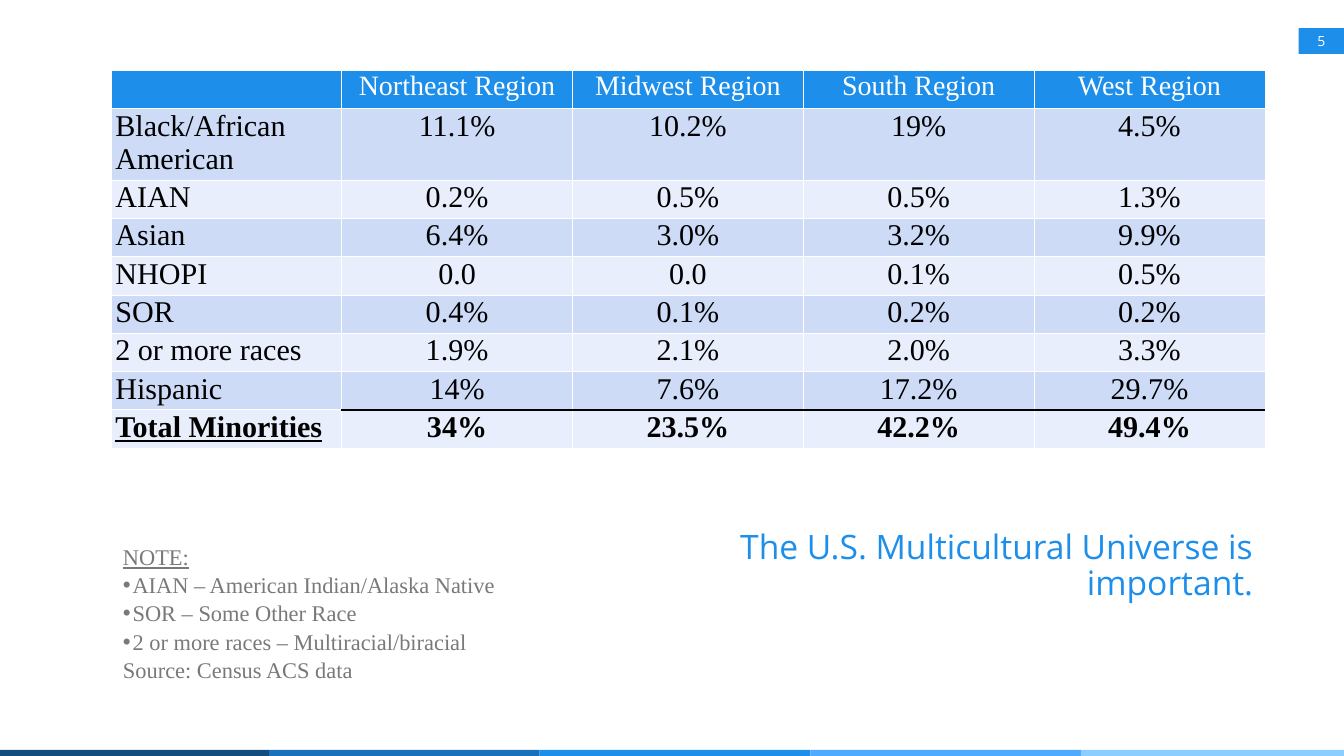
from lxml import etree
from pptx import Presentation
from pptx.dml.color import RGBColor
from pptx.enum.shapes import MSO_SHAPE
from pptx.enum.text import MSO_ANCHOR, MSO_AUTO_SIZE, PP_ALIGN
from pptx.oxml.ns import qn
from pptx.util import Inches, Pt

RECT = MSO_SHAPE.RECTANGLE
LEFT, CENTER, RIGHT = PP_ALIGN.LEFT, PP_ALIGN.CENTER, PP_ALIGN.RIGHT
TOP, MIDDLE = MSO_ANCHOR.TOP, MSO_ANCHOR.MIDDLE

W, H = 26.67, 15
MARGIN, COL, ROW = 2.2, 4.58, 0.76
SANS, SERIF = "Open Sans", "Times New Roman"
COLORS = {
    "blue": "1D8EEA", "white": "FFFFFF", "black": "000000", "gray": "797979",
    "band_dark": "CDDBF7", "band_light": "E8EEFB",
}
STRIPES = ["134D7E", "1971BB", "1D8EEA", "4EAAFF", "8BCEFF"]

TABLE = [
    ["", "Northeast Region", "Midwest Region", "South Region", "West Region"],
    ["Black/African American", "11.1%", "10.2%", "19%", "4.5%"],
    ["AIAN", "0.2%", "0.5%", "0.5%", "1.3%"],
    ["Asian", "6.4%", "3.0%", "3.2%", "9.9%"],
    ["NHOPI", "0.0", "0.0", "0.1%", "0.5%"],
    ["SOR", "0.4%", "0.1%", "0.2%", "0.2%"],
    ["2 or more races", "1.9%", "2.1%", "2.0%", "3.3%"],
    ["Hispanic", "14%", "7.6%", "17.2%", "29.7%"],
    ["Total Minorities", "34%", "23.5%", "42.2%", "49.4%"],
]
NOTES = [
    ("NOTE:", False),
    ("AIAN – American Indian/Alaska Native", True),
    ("SOR – Some Other Race", True),
    ("2 or more races – Multiracial/biracial", True),
    ("Source: Census ACS data", False),
]


def write(p, text, color, align=LEFT, **font):
    p.alignment = align
    r = p.add_run()
    r.text = text
    r.font.color.rgb = RGBColor.from_string(COLORS[color])
    for name, value in font.items():
        setattr(r.font, name, value)


def add_rect(x, y, w, h, color):
    s = slide.shapes.add_shape(RECT, Inches(x), Inches(y), Inches(w), Inches(h))
    s.shadow.inherit = False
    s.fill.solid()
    s.fill.fore_color.rgb = RGBColor.from_string(color)
    s.line.fill.background()
    return s


prs = Presentation()
prs.slide_width, prs.slide_height = Inches(W), Inches(H)
slide = prs.slides.add_slide(prs.slide_layouts[1])
title, notes = slide.placeholders

# Striped footer
stripe_w = 5.37
for i, color in enumerate(STRIPES):
    add_rect(i * stripe_w - 0.03, H - 0.12, stripe_w, 0.2, color)

# Title and notes
boxes = [
    (title, (11.61, 10.63, 13.5, 1.24), MIDDLE),
    (notes, (MARGIN, 10.63, 9.4, 3.53), TOP),
]
for s, box, anchor in boxes:
    s.left, s.top, s.width, s.height = map(Inches, box)
    tf = s.text_frame
    frame = {
        "word_wrap": True, "auto_size": MSO_AUTO_SIZE.NONE, "vertical_anchor": anchor,
        "margin_left": Inches(0.24), "margin_right": Inches(0.24),
        "margin_top": Inches(0.12), "margin_bottom": Inches(0.12),
    }
    for name, value in frame.items():
        setattr(tf, name, value)

p = title.text_frame.paragraphs[0]
p.line_spacing = 0.87
write(p, "The U.S. Multicultural Universe is important.", "blue", RIGHT,
      size=Pt(48), name=SANS)

tf = notes.text_frame
for i, (text, bulleted) in enumerate(NOTES):
    p = tf.add_paragraph() if i else tf.paragraphs[0]
    p.space_before = Pt(0)
    p.line_spacing = 1.05
    write(p, text, "gray", size=Pt(32), name=SERIF, underline=i == 0)
    pPr = p._p.get_or_add_pPr()
    indent = Inches(0.19) if bulleted else 0
    pPr.set("marL", str(indent))
    pPr.set("indent", str(-indent))
    if bulleted:
        etree.SubElement(pPr, qn("a:buChar"), char="•")
    else:
        etree.SubElement(pPr, qn("a:buNone"))

# Page number
s = add_rect(W - 0.9, 0.56, 0.9, 0.51, COLORS["blue"])
tf = s.text_frame
tf.vertical_anchor = MIDDLE
tf.margin_left = tf.margin_right = tf.margin_top = tf.margin_bottom = 0
write(tf.paragraphs[0], "5", "white", CENTER, size=Pt(20), name=SANS)

# Regional table
n_rows, n_cols = len(TABLE), len(TABLE[0])
table = slide.shapes.add_table(n_rows, n_cols, Inches(MARGIN), Inches(1.39),
                               Inches(n_cols * COL), Inches(n_rows * ROW)).table
for column in table.columns:
    column.width = Inches(COL)
for row in table.rows:
    row.height = Inches(ROW)
table.rows[1].height = Inches(1.42)

total = n_rows - 1
for i, values in enumerate(TABLE):
    fill = "blue" if i == 0 else "band_dark" if i % 2 else "band_light"
    for j, value in enumerate(values):
        cell = table.cell(i, j)
        cell.margin_left = cell.margin_right = Inches(0.09)
        cell.margin_top = cell.margin_bottom = Inches(0.02)
        cell.fill.solid()
        cell.fill.fore_color.rgb = RGBColor.from_string(COLORS[fill])
        if value:
            write(cell.text_frame.paragraphs[0], value, "black" if i else "white",
                  CENTER if j else LEFT, size=Pt(43 if i else 40), name=SERIF,
                  bold=i == total, underline=i == total and j == 0)
        # Black rule between the last group and the totals
        if j and i >= total - 1:
            edge = "a:lnT" if i == total else "a:lnB"
            ln = etree.Element(qn(edge), w=str(Pt(3)))
            line_fill = etree.SubElement(ln, qn("a:solidFill"))
            etree.SubElement(line_fill, qn("a:srgbClr"), val=COLORS["black"])
            cell._tc.get_or_add_tcPr().insert(0, ln)

prs.save("out.pptx")
